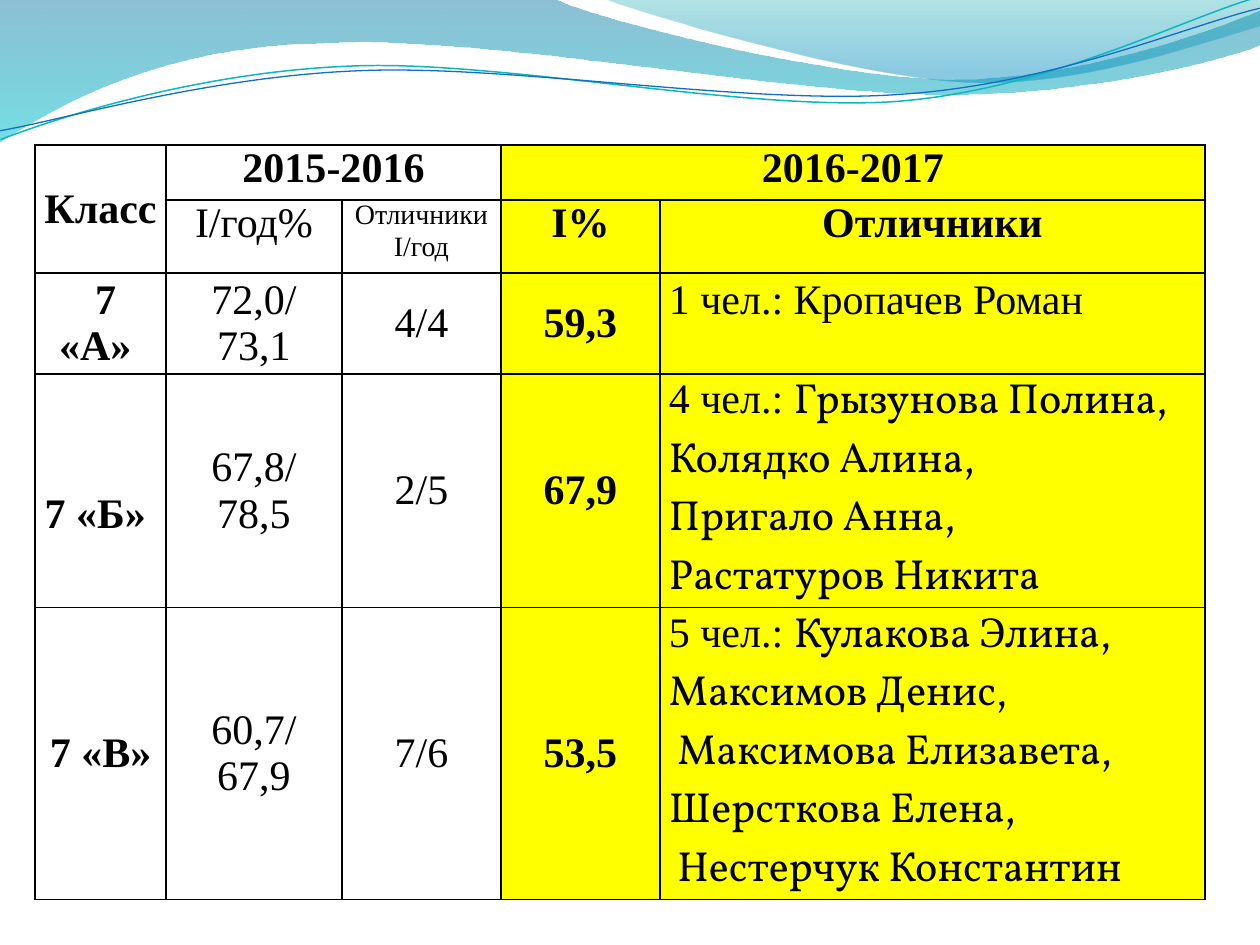
from dataclasses import dataclass

from lxml import etree
from pptx import Presentation
from pptx.dml.color import RGBColor
from pptx.enum.text import MSO_ANCHOR, PP_ALIGN
from pptx.oxml.ns import qn
from pptx.util import Pt

EMU_PER_PX = 914400 / 126
LEFT, CENTER = PP_ALIGN.LEFT, PP_ALIGN.CENTER
TOP, MIDDLE = MSO_ANCHOR.TOP, MSO_ANCHOR.MIDDLE

BLACK = RGBColor(0x00, 0x00, 0x00)
WHITE = RGBColor(0xFF, 0xFF, 0xFF)
YELLOW = RGBColor(0xFF, 0xFF, 0x00)
DEEP_BLUE = RGBColor(0x00, 0x74, 0xA1)
AQUA = RGBColor(0x00, 0xC6, 0xCF)
TEAL = RGBColor(0x00, 0xA1, 0xA9)
SKY = RGBColor(0x00, 0x8B, 0xBF)
LINE_TEAL = RGBColor(0x0A, 0xB8, 0xBF)
LINE_BLUE = RGBColor(0x0F, 0x6F, 0xC6)

SERIF, NAMES_FONT = "Times New Roman", "Vollkorn"
COLUMN_WIDTHS = (131, 176, 159, 159, 545)
ROW_HEIGHTS = (55, 73, 101, 110, 275)
TABLE_LEFT, TABLE_TOP, TABLE_HEIGHT = 35, 145, 704
SIDE_MARGIN = 9
LINE_TILT = 357.3


@dataclass(frozen=True)
class Stop:
    position: float
    color: RGBColor
    opacity: int


@dataclass(frozen=True)
class Wave:
    """Segments hold one point for a line, or three for a Bezier curve."""
    start: tuple[int, int]
    segments: tuple[tuple[int, ...], ...]
    stops: tuple[Stop, ...] = ()
    line: RGBColor | None = None
    line_width: float = 0
    rotation: float = 0


@dataclass(frozen=True)
class Cell:
    """The lead is set in the serif font before the first line."""
    row: int
    column: int
    lines: tuple[str, ...]
    bold: bool = True
    size: int = 24
    fill: RGBColor | None = None
    align: PP_ALIGN = CENTER
    anchor: MSO_ANCHOR = MIDDLE
    top_margin: int = 0
    span: tuple[int, int] = (1, 1)
    lead: str = ""


WAVES = (
    Wave((0, 0), ((554, -1), (600, 21, 837, 79, 955, 79), (1075, 79, 1207, 33, 1260, 11),
                  (1261, 45), (1239, 55, 1096, 96, 940, 94), (784, 94, 481, 35, 324, 43),
                  (163, 45, 58, 105, -1, 142), (0, 0)),
         stops=(Stop(0, DEEP_BLUE, 45), Stop(1, AQUA, 55))),
    Wave((604, -1), ((641, 14, 859, 78, 969, 82), (1079, 87, 1211, 40, 1260, 26),
                     (1260, 0), (604, -1)),
         stops=(Stop(0, TEAL, 30), Stop(0.8, SKY, 45))),
    Wave((-2, 110), ((58, 90, 199, 52, 350, 53), (499, 53, 745, 118, 896, 114),
                     (1048, 109, 1184, 45, 1260, 27)),
         line=LINE_TEAL, line_width=0.85, rotation=LINE_TILT),
    Wave((-2, 101), ((57, 94, 207, 57, 357, 58), (509, 58, 750, 112, 902, 107),
                     (1052, 104, 1189, 52, 1262, 38)),
         line=LINE_BLUE, line_width=0.75, rotation=LINE_TILT),
)

HEADERS = (
    Cell(0, 0, ("Класс",), span=(2, 1)),
    Cell(0, 1, ("2015-2016",), anchor=TOP, span=(1, 2)),
    Cell(0, 3, ("2016-2017",), fill=YELLOW, anchor=TOP, span=(1, 2)),
    Cell(1, 1, ("I/год%",), bold=False, anchor=TOP),
    Cell(1, 2, ("Отличники", "I/год"), bold=False, size=16, anchor=TOP),
    Cell(1, 3, ("I%",), fill=YELLOW, anchor=TOP),
    Cell(1, 4, ("Отличники",), fill=YELLOW, anchor=TOP),
)

CLASSES = (
    Cell(2, 0, (" 7 «А» ",)),
    Cell(3, 0, ("7 «Б» ",), top_margin=47),
    Cell(4, 0, ("7 «В»",)),
)

# Row, last year's percentages, last year's top pupils, this year's percentage
RESULTS = (
    (2, ("72,0/", "73,1"), "4/4", "59,3"),
    (3, ("67,8/", "78,5"), "2/5", "67,9"),
    (4, ("60,7/", "67,9"), "7/6", "53,5"),
)

PUPILS = (
    Cell(2, 4, ("1 чел.: Кропачев Роман",), bold=False, fill=YELLOW, align=LEFT,
         anchor=TOP, top_margin=4),
    Cell(3, 4, ("Грызунова Полина, Колядко Алина,", "Пригало Анна,", "Растатуров Никита"),
         bold=False, fill=YELLOW, align=LEFT, lead="4 чел.: "),
    Cell(4, 4, ("Кулакова Элина, Максимов Денис,", " Максимова Елизавета, Шерсткова Елена,",
                " Нестерчук Константин"),
         bold=False, fill=YELLOW, align=LEFT, lead="5 чел.: "),
)


def px(length: int) -> int:
    return round(length * EMU_PER_PX)


def set_all(target, values: dict) -> None:
    for name, value in values.items():
        setattr(target, name, value)


def bend(shape, wave: Wave) -> None:
    """Join the three straight steps of each curved segment into one Bezier."""
    steps = iter(list(shape._element.iter(qn("a:lnTo"))))
    for segment in wave.segments:
        first = next(steps)
        if len(segment) == 2:
            continue
        first.tag
        curve = etree.Element(qn("a:cubicBezTo"))
        first.addprevious(curve)
        for step in (first, next(steps), next(steps)):
            curve.append(step[0])
            step.getparent().remove(step)


def draw_wave(slide, wave: Wave) -> None:
    builder = slide.shapes.build_freeform(*wave.start, scale=EMU_PER_PX)
    points = [segment[index:index + 2] for segment in wave.segments
              for index in range(0, len(segment), 2)]
    builder.add_line_segments(points, close=bool(wave.stops))
    shape = builder.convert_to_shape()
    bend(shape, wave)
    shape.rotation = wave.rotation
    shape.shadow.inherit = False
    if wave.line is None:
        shape.line.fill.background()
    else:
        shape.line.color.rgb = wave.line
        shape.line.width = Pt(wave.line_width)
    if not wave.stops:
        shape.fill.background()
        return
    shape.fill.gradient()
    shape.fill.gradient_angle = 270
    for target, stop in zip(shape.fill.gradient_stops, wave.stops):
        target.position = stop.position
        target.color.rgb = stop.color
    for color, stop in zip(shape._element.spPr.iter(qn("a:srgbClr")), wave.stops):
        etree.SubElement(color, qn("a:alpha"), val=str(stop.opacity * 1000))


def add_borders(table_cell) -> None:
    properties = table_cell._tc.get_or_add_tcPr()
    for side in ("lnL", "lnR", "lnT", "lnB"):
        border = etree.SubElement(properties, qn(f"a:{side}"), w=str(Pt(1)))
        fill = etree.SubElement(border, qn("a:solidFill"))
        etree.SubElement(fill, qn("a:srgbClr"), val=str(BLACK))


def add_span(para, text: str, cell: Cell, font: str) -> None:
    span = para.add_run()
    span.text = text
    set_all(span.font, {"name": font, "size": Pt(cell.size), "bold": cell.bold})
    span.font.color.rgb = BLACK


def fill_cell(table, cell: Cell) -> None:
    box = table.cell(cell.row, cell.column)
    rows, columns = cell.span
    if cell.span != (1, 1):
        box.merge(table.cell(cell.row + rows - 1, cell.column + columns - 1))
    set_all(box, {"margin_left": px(SIDE_MARGIN), "margin_right": px(SIDE_MARGIN),
                  "margin_top": px(cell.top_margin), "margin_bottom": 0,
                  "vertical_anchor": cell.anchor})
    if cell.fill is None:
        box.fill.background()
    else:
        box.fill.solid()
        box.fill.fore_color.rgb = cell.fill
    for index, line in enumerate(cell.lines):
        para = box.text_frame.add_paragraph() if index else box.text_frame.paragraphs[0]
        para.alignment = cell.align
        if cell.lead and index == 0:
            add_span(para, cell.lead, cell, SERIF)
        add_span(para, line, cell, NAMES_FONT if cell.lead else SERIF)


def draw_table(slide) -> None:
    frame = slide.shapes.add_table(len(ROW_HEIGHTS), len(COLUMN_WIDTHS), px(TABLE_LEFT),
                                   px(TABLE_TOP), px(sum(COLUMN_WIDTHS)), px(TABLE_HEIGHT))
    table = frame.table
    set_all(table, {"first_row": False, "horz_banding": False})
    for column, width in zip(table.columns, COLUMN_WIDTHS):
        column.width = px(width)
    for row, height in zip(table.rows, ROW_HEIGHTS):
        row.height = px(height)
    frame.height = px(TABLE_HEIGHT)
    for table_cell in table.iter_cells():
        add_borders(table_cell)
    results = [cell for row, percentages, top_pupils, current in RESULTS for cell in (
        Cell(row, 1, percentages, bold=False, fill=WHITE),
        Cell(row, 2, (top_pupils,), bold=False, fill=WHITE),
        Cell(row, 3, (current,), fill=YELLOW))]
    for cell in (*HEADERS, *CLASSES, *results, *PUPILS):
        fill_cell(table, cell)


def main() -> None:
    deck = Presentation()
    set_all(deck, {"slide_width": px(1260), "slide_height": px(945)})
    slide = deck.slides.add_slide(deck.slide_layouts[6])
    for wave in WAVES:
        draw_wave(slide, wave)
    draw_table(slide)
    deck.save("out.pptx")


if __name__ == "__main__":
    main()
